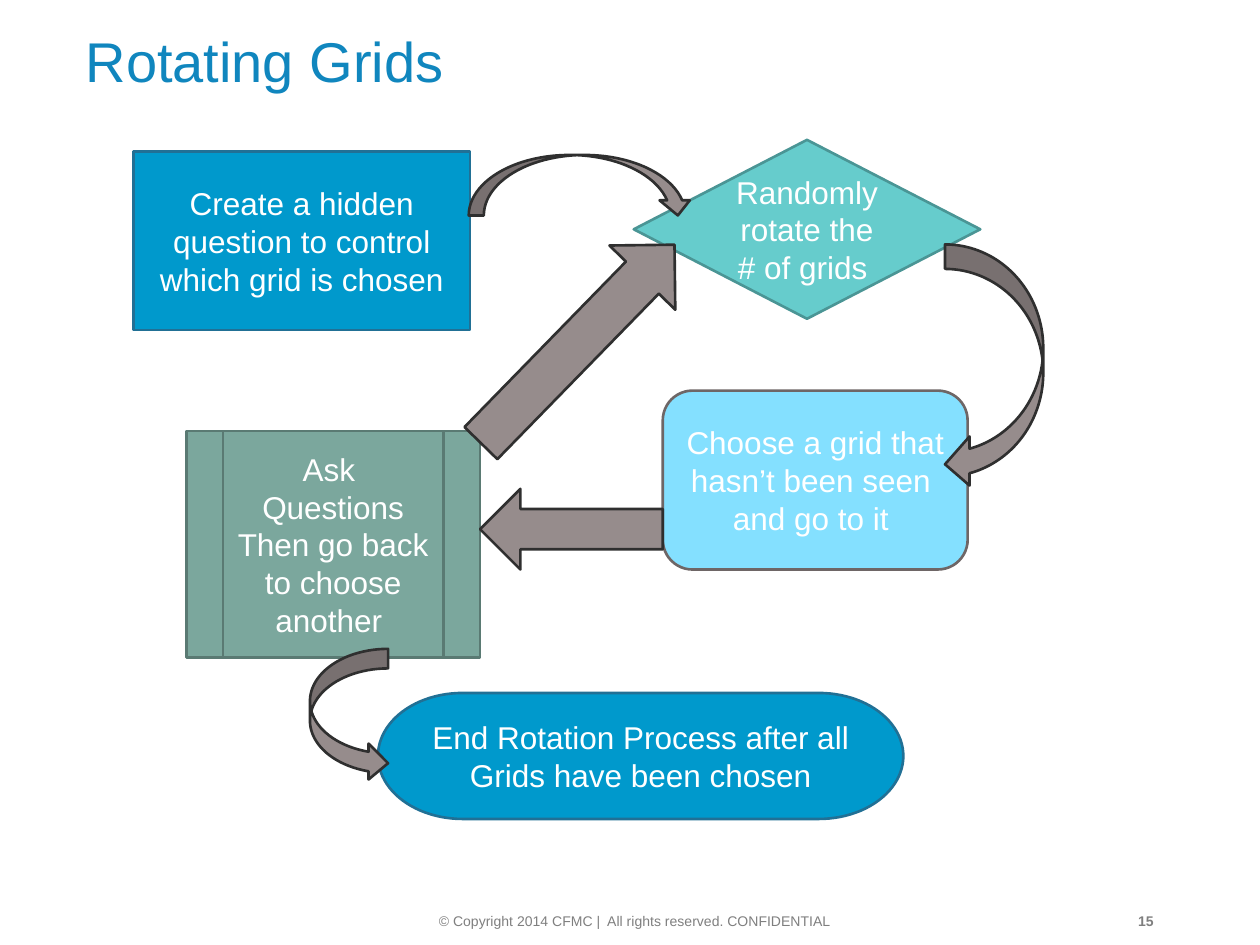
from pptx import Presentation
from pptx.dml.color import RGBColor
from pptx.enum import shapes, text
from pptx.util import Inches, Pt

KIND = shapes.MSO_SHAPE
ALIGN = text.PP_ALIGN


def write(shape, words, size, color, align=ALIGN.CENTER, bold=False):
    frame = shape.text_frame
    frame.word_wrap = True
    frame.vertical_anchor = text.MSO_ANCHOR.MIDDLE
    para = frame.paragraphs[0]
    para.alignment = align
    run = para.add_run()
    run.text = words
    run.font.name = "Arial"
    run.font.size = Pt(size)
    run.font.bold = bold
    run.font.color.rgb = RGBColor.from_string(color)


def draw(kind, box, fill, line):
    shape = slide.shapes.add_shape(kind, *map(Inches, box))
    shape.shadow.inherit = False
    shape.fill.solid()
    shape.fill.fore_color.rgb = RGBColor.from_string(fill)
    shape.line.color.rgb = RGBColor.from_string(line)
    shape.line.width = Pt(1.5)
    return shape


prs = Presentation()
prs.slide_width, prs.slide_height = Inches(10), Inches(7.5)
slide = prs.slides.add_slide(prs.slide_layouts[5])

title = slide.shapes.title
title.left, title.top = Inches(0.58), Inches(-0.01)
title.width, title.height = Inches(8.92), Inches(0.97)
write(title, "Rotating Grids", 32, "1086BE", ALIGN.LEFT)

# Footer
for left, width, words, bold in [
    (2.4, 5.28, "© Copyright 2014 CFMC |  All rights reserved. CONFIDENTIAL", False),
    (8.69, 0.81, "15", True),
]:
    box = slide.shapes.add_textbox(Inches(left), Inches(7.11), Inches(width), Inches(0.4))
    write(box, words, 8, "7F7F7F", bold=bold)

# Steps of the flow
steps = [
    (KIND.FLOWCHART_PROCESS, (1.06, 1.2, 2.67, 1.42), "0099CC", "217095",
     "Create a hidden question to control which grid is chosen"),
    (KIND.FLOWCHART_DECISION, (5.03, 1.11, 2.75, 1.42), "66CCCC", "4A9595",
     "Randomly rotate the # of grids "),
    (KIND.FLOWCHART_ALTERNATE_PROCESS, (5.26, 3.1, 2.42, 1.42), "84E0FF", "6E6666",
     "Choose a grid that hasn’t been seen  and go to it "),
    (KIND.FLOWCHART_PREDEFINED_PROCESS, (1.48, 3.42, 2.33, 1.8), "7BA79D", "5A7A73",
     "Ask  Questions Then go back to choose another "),
    (KIND.FLOWCHART_TERMINATOR, (3, 5.5, 4.17, 1), "0099CC", "217095",
     "End Rotation Process after all Grids have been chosen"),
]
for kind, box, fill, line, words in steps:
    write(draw(kind, box, fill, line), words, 18, "FFFFFF")

# Block arrows between the steps
arrows = [
    (KIND.CURVED_DOWN_ARROW, (3.72, 1.23, 1.78, 0.48), (0.25, 0.5, 0.25), 0),
    (KIND.CURVED_LEFT_ARROW, (7.5, 1.94, 0.78, 1.94), (0.25, 0.5, 0.25), 0),
    (KIND.LEFT_ARROW, (3.81, 3.88, 1.45, 0.64), (0.5, 0.5), 0),
    (KIND.CURVED_RIGHT_ARROW, (2.46, 5.15, 0.62, 1.05), (0.25, 0.46, 0.25), 0),
    (KIND.UP_ARROW, (4.22, 1.63, 0.73, 2.2), (0.5, 0.5), 44.3),
]
for kind, box, adjust, turn in arrows:
    arrow = draw(kind, box, "968C8C", "2F2F2F")
    arrow.rotation = turn
    for i, value in enumerate(adjust):
        arrow.adjustments[i] = value

prs.save("out.pptx")
